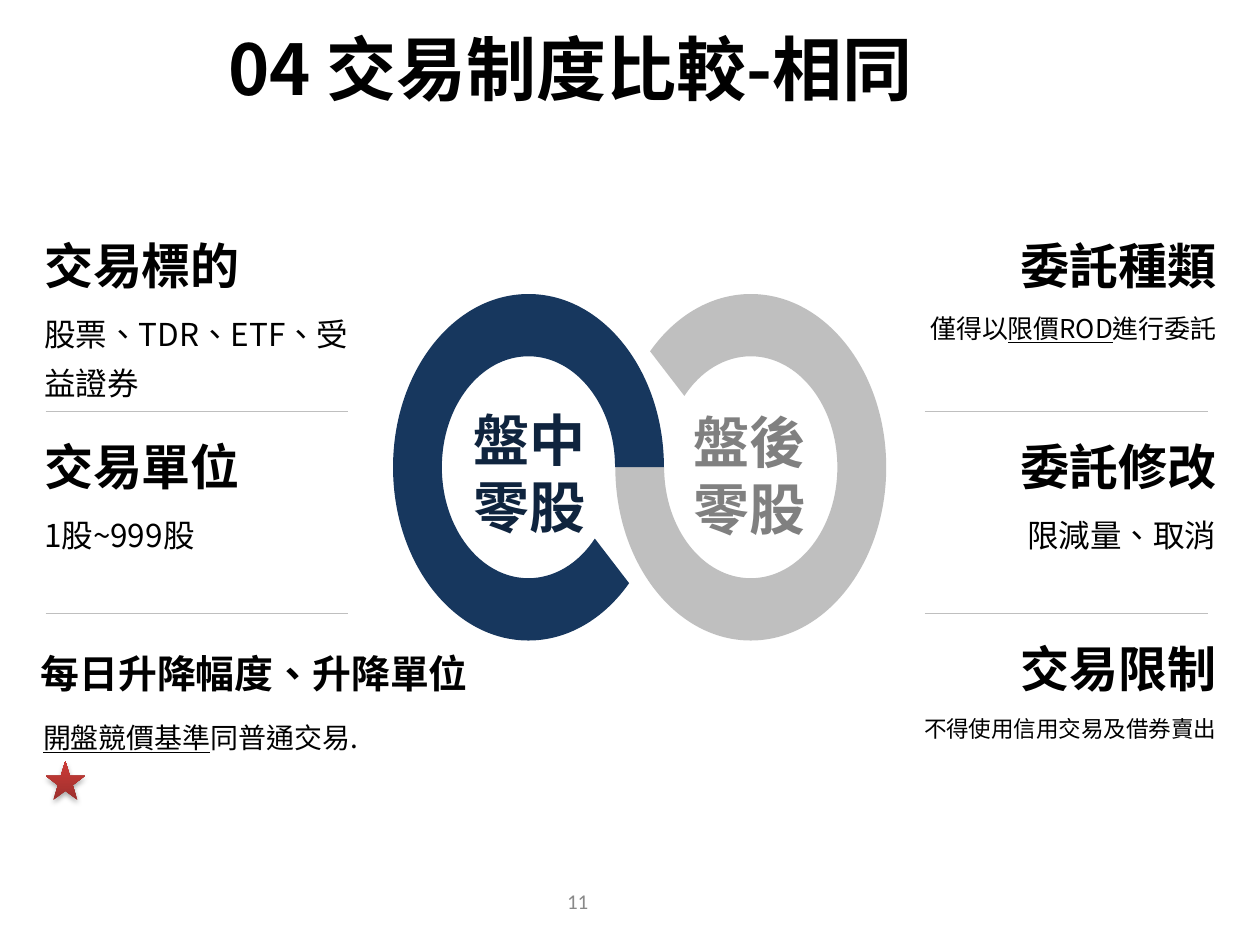
from math import cos, radians, sin, tan

from lxml import etree
from pptx import Presentation
from pptx.dml.color import RGBColor
from pptx.enum import lang, shapes, text
from pptx.oxml.ns import qn
from pptx.util import Pt

THEME = {
    "cjk": "Noto Sans CJK SC", "latin": "Calibri",
    "black": "000000", "navy": "17375E", "grey": "BFBFBF",
    "navy_text": "0F243E", "grey_text": "808080", "page": "898989",
    "star": ("9C2F2D", "CE3B37"),
    "title_size": 40, "ring_size": 32, "heading_size": 28, "page_size": 12,
}
LEFT, CENTER, RIGHT = text.PP_ALIGN.LEFT, text.PP_ALIGN.CENTER, text.PP_ALIGN.RIGHT
TOP, MIDDLE, BOTTOM = (text.MSO_ANCHOR.TOP, text.MSO_ANCHOR.MIDDLE,
                       text.MSO_ANCHOR.BOTTOM)

TITLE = "04 交易制度比較-相同"
PAGE = "11"
COLUMNS = [
    {"x": 20.2, "w": 193.7, "align": LEFT, "rule": (26.1, 198.7), "items": [
        {"heading": "交易標的", "runs": [("股票、TDR、ETF、受益證券", False)], "size": 18},
        {"heading": "交易單位", "runs": [("1股~999股", False)], "size": 18},
        {"heading": "每日升降幅度、升降單位", "heading_size": 22.2, "spacing": 0.9,
         "heading_w": 270, "runs": [("開盤競價基準", True), ("同普通交易.", False)],
         "size": 16, "shift": (-2, -0.6), "drop": 2}]},
    {"x": 518.4, "w": 181.6, "align": RIGHT, "rule": (528.5, 690.5), "items": [
        {"heading": "委託種類", "size": 14.8,
         "runs": [("僅得以", False), ("限價ROD", True), ("進行委託", False)]},
        {"heading": "委託修改", "runs": [("限減量、取消", False)], "size": 18},
        {"heading": "交易限制", "runs": [("不得使用信用交易及借券賣出", False)],
         "size": 12.9}]},
]
RINGS = [
    {"label": "盤後零股", "cx": 429, "turn": 180, "fill": "grey",
     "color": "grey_text", "box": (385.2, 229.3)},
    {"label": "盤中零股", "cx": 302, "turn": 0, "fill": "navy",
     "color": "navy_text", "box": (259.9, 228.2)},
]
RING_CY, OUTER, INNER = 267, (77.4, 99), (49.5, 63.4)
OUTER_STOPS, INNER_STOPS = (0, 90, 180, 270, 318), (320, 270, 180, 90, 0)
ROW_TOP, ROW_STEP, HEADING_H, BODY_H, RULE_OFFSET = 139.7, 115.2, 31, 44.6, 95.3
NARROW = (5, 2.7)
WIDE = (7.2, 3.6)


def rgb(value):
    return RGBColor.from_string(value)


def add_text(s, box, runs, size, color="black", font="cjk", bold=False,
             align=LEFT, anchor=TOP, inset=WIDE, wrap=True, spacing=None):
    tf = s.shapes.add_textbox(*map(Pt, box)).text_frame
    tf.word_wrap, tf.vertical_anchor = wrap, anchor
    tf.margin_left = tf.margin_right = Pt(inset[0])
    tf.margin_top = tf.margin_bottom = Pt(inset[1])
    p = tf.paragraphs[0]
    p.alignment, p.line_spacing = align, spacing
    p.font.size, p.font.bold, p.font.name = Pt(size), bold, THEME[font]
    p.font.color.rgb = rgb(THEME[color])
    props = p._p.get_or_add_pPr().find(qn("a:defRPr"))
    etree.SubElement(props, qn("a:ea"), typeface=THEME[font])
    for words, underlined in runs:
        r = p.add_run()
        r.text = words
        r.font.language_id = lang.MSO_LANGUAGE_ID.TRADITIONAL_CHINESE
        if underlined:
            r.font.underline = True


def add_rule(s, x1, x2, y):
    sp = s.shapes.add_connector(shapes.MSO_CONNECTOR.STRAIGHT,
                                Pt(x1), Pt(y), Pt(x2), Pt(y))
    sp.line.color.rgb, sp.line.width = rgb(THEME["grey"]), Pt(0.25)
    etree.SubElement(sp._element.spPr, qn("a:effectLst"))


def add_ring(s, ring):
    def point(radii, angle, pull=0):
        a = radians(ring["turn"] - angle)
        return (Pt(ring["cx"] + radii[0] * (cos(a) + pull * sin(a))),
                Pt(RING_CY + radii[1] * (sin(a) - pull * cos(a))))

    def curves(radii, stops):
        points = []
        for a, b in zip(stops, stops[1:]):
            pull = 4 / 3 * tan(radians(b - a) / 4)
            points += [point(radii, a, pull), point(radii, b, -pull), point(radii, b)]
        return points

    outer, inner = curves(OUTER, OUTER_STOPS), curves(INNER, INNER_STOPS)
    builder = s.shapes.build_freeform(*point(OUTER, OUTER_STOPS[0]))
    builder.add_line_segments(outer + [point(INNER, INNER_STOPS[0])] + inner)
    sp = builder.convert_to_shape()
    lines = list(sp._element.iter(qn("a:lnTo")))
    split = len(outer)
    for part in (lines[:split], lines[split + 1:]):
        for first, second, third in zip(part[::3], part[1::3], part[2::3]):
            curve = etree.Element(qn("a:cubicBezTo"))
            first.addprevious(curve)
            for line in (first, second, third):
                curve.append(line[0])
                line.getparent().remove(line)
    sp.shadow.inherit = False
    sp.fill.solid()
    sp.fill.fore_color.rgb = rgb(THEME[ring["fill"]])
    sp.line.fill.background()


def add_column(s, column):
    x, w, align = column["x"], column["w"], column["align"]
    for row, item in enumerate(column["items"]):
        y = ROW_TOP + row * ROW_STEP
        heading_dx, body_dx = item.get("shift", (0, 0))
        add_text(s, (x + body_dx, y + HEADING_H + item.get("drop", 0), w, BODY_H),
                 item["runs"], item["size"], align=align, inset=NARROW, spacing=1.3)
        add_text(s, (x + heading_dx, y, item.get("heading_w", w), HEADING_H),
                 [(item["heading"], False)],
                 item.get("heading_size", THEME["heading_size"]), bold=True,
                 align=align, anchor=BOTTOM, inset=NARROW,
                 spacing=item.get("spacing"))
        if row < len(column["items"]) - 1:
            add_rule(s, *column["rule"], y + RULE_OFFSET)


def add_star(s):
    sp = s.shapes.add_shape(shapes.MSO_SHAPE.STAR_5_POINT,
                            Pt(26.2), Pt(434.9), Pt(22.3), Pt(22.3))
    sp.fill.gradient()
    sp.fill.gradient_angle = 90
    for stop, color in zip(sp.fill.gradient_stops, THEME["star"]):
        stop.color.rgb = rgb(color)
    sp.line.fill.background()
    sp.shadow.inherit = False
    effects = sp._element.spPr.find(qn("a:effectLst"))
    shadow = etree.SubElement(effects, qn("a:outerShdw"), blurRad=str(Pt(3.1)),
                              dist=str(Pt(1.8)), dir="5400000", rotWithShape="0")
    color = etree.SubElement(shadow, qn("a:srgbClr"), val=THEME["black"])
    etree.SubElement(color, qn("a:alpha"), val="35000")


def main():
    prs = Presentation()
    prs.slide_width, prs.slide_height = Pt(720), Pt(540)
    s = prs.slides.add_slide(prs.slide_layouts[6])
    add_text(s, (246.2, 500.4, 167.8, 28.8), [(PAGE, False)], THEME["page_size"],
             "page", "latin", align=CENTER, anchor=MIDDLE)
    for ring in RINGS:
        add_ring(s, ring)
    for column in COLUMNS:
        add_column(s, column)
    for ring in RINGS:
        add_text(s, (*ring["box"], 85.7, 86.4), [(ring["label"], False)],
                 THEME["ring_size"], ring["color"], bold=True, align=CENTER)
    add_text(s, (85, 9.4, 481.7, 58.3), [(TITLE, False)], THEME["title_size"],
             bold=True, align=CENTER, anchor=MIDDLE)
    add_star(s)
    prs.save("out.pptx")


if __name__ == "__main__":
    main()
